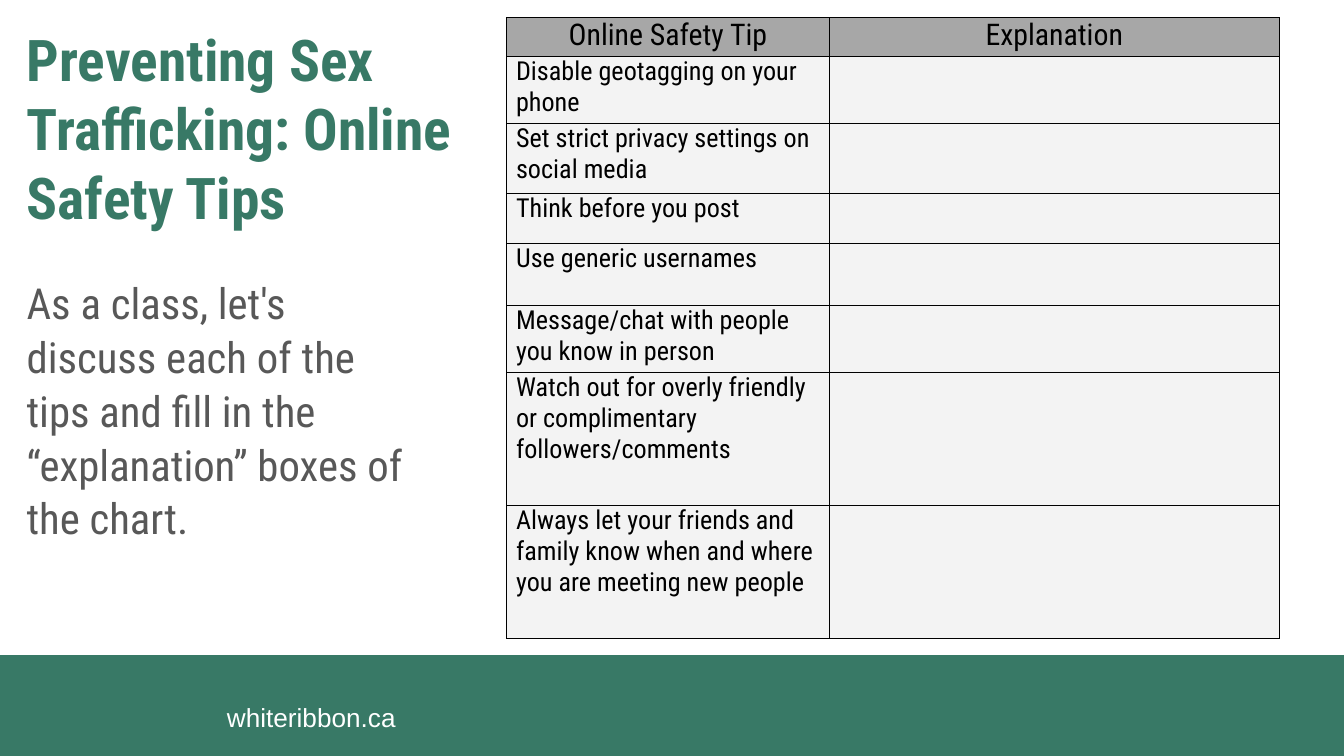
from dataclasses import dataclass
from typing import Optional

from lxml.etree import SubElement
from pptx import Presentation
from pptx.dml.color import RGBColor
from pptx.enum.shapes import MSO_SHAPE as Shape
from pptx.enum.text import MSO_ANCHOR as Anchor, PP_ALIGN as Align
from pptx.oxml.ns import qn
from pptx.util import Inches, Pt

SLIDE_WIDTH = Inches(10)
SLIDE_HEIGHT = SLIDE_WIDTH * 9 // 16
COLOURS = {
    "green": "387966",
    "grey": "585858",
    "white": "FFFFFF",
    "black": "000000",
    "header": "A7A7A7",
    "cell": "F3F3F3",
}
CONDENSED = "Roboto Condensed"


@dataclass(frozen=True)
class TextStyle:
    size: float
    colour: str
    font: str = CONDENSED
    bold: bool = False


@dataclass(frozen=True)
class TextBlock:
    left: float
    top: float
    width: float
    height: float
    words: str
    style: TextStyle
    line_spacing: Optional[float] = None


@dataclass(frozen=True)
class TipRow:
    height: float
    tip: str
    explanation: str = ""


HEADER_STYLE = TextStyle(16, "black")
TIP_STYLE = TextStyle(14, "black")

TEXT_BLOCKS = [
    TextBlock(1.59, 5.12, 1.54, 0.42, "whiteribbon.ca", TextStyle(14, "white", "Arial")),
    TextBlock(0.1, 0.08, 3.39, 0.63, "Preventing Sex Trafficking: Online Safety Tips",
              TextStyle(30.8, "green", bold=True)),
    TextBlock(0.1, 1.94, 3.03, 2,
              "As a class, let's discuss each of the tips and fill in the "
              "“explanation” boxes of the chart.",
              TextStyle(22.9, "grey"), 1.05),
]

COLUMN_WIDTHS = [2.4, 3.35]
TIP_ROWS = [
    TipRow(0.29, "Online Safety Tip", "Explanation"),
    TipRow(0.5, "Disable geotagging on your phone"),
    TipRow(0.52, "Set strict privacy settings on social media"),
    TipRow(0.37, "Think before you post"),
    TipRow(0.46, "Use generic usernames"),
    TipRow(0.5, "Message/chat with people you know in person"),
    TipRow(0.99, "Watch out for overly friendly or complimentary followers/comments"),
    TipRow(0.99, "Always let your friends and family know when and where "
                 "you are meeting new people"),
]


def rgb(name: str) -> RGBColor:
    return RGBColor.from_string(COLOURS[name])


def add_run(paragraph, words: str, style: TextStyle) -> None:
    run = paragraph.add_run()
    run.text = words
    run.font.size = Pt(style.size)
    run.font.name = style.font
    run.font.bold = style.bold
    run.font.color.rgb = rgb(style.colour)


def set_margins(holder, side: float, end: float) -> None:
    holder.margin_left = holder.margin_right = Inches(side)
    holder.margin_top = holder.margin_bottom = Inches(end)


def add_footer_band(slide) -> None:
    top = Inches(4.88)
    band = slide.shapes.add_shape(
        Shape.RECTANGLE, Inches(0), top, SLIDE_WIDTH, SLIDE_HEIGHT - top)
    band.shadow.inherit = False
    band.fill.solid()
    band.fill.fore_color.rgb = rgb("green")
    band.line.color.rgb = rgb("green")
    band.line.width = Pt(0.75)


def add_text_block(slide, block: TextBlock) -> None:
    frame = slide.shapes.add_textbox(
        Inches(block.left), Inches(block.top),
        Inches(block.width), Inches(block.height)).text_frame
    frame.word_wrap = True
    frame.vertical_anchor = Anchor.TOP
    set_margins(frame, 0.1, 0.1)
    paragraph = frame.paragraphs[0]
    if block.line_spacing:
        paragraph.line_spacing = block.line_spacing
    add_run(paragraph, block.words, block.style)


def add_borders(cell, width: float = 0.5) -> None:
    """Line all four sides; must precede the fill, which comes later in tcPr."""
    properties = cell._tc.get_or_add_tcPr()
    for side in ("a:lnL", "a:lnR", "a:lnT", "a:lnB"):
        line = SubElement(properties, qn(side), w=str(Pt(width)))
        fill = SubElement(line, qn("a:solidFill"))
        SubElement(fill, qn("a:srgbClr"), val=COLOURS["black"])


def fill_cell(cell, words: str, is_header: bool) -> None:
    add_borders(cell)
    cell.fill.solid()
    cell.fill.fore_color.rgb = rgb("header" if is_header else "cell")
    set_margins(cell, 0.07, 0)
    paragraph = cell.text_frame.paragraphs[0]
    if is_header:
        paragraph.alignment = Align.CENTER
    if words:
        add_run(paragraph, words, HEADER_STYLE if is_header else TIP_STYLE)


def add_tips_table(slide) -> None:
    table = slide.shapes.add_table(
        len(TIP_ROWS), len(COLUMN_WIDTHS), Inches(3.77), Inches(0.13),
        Inches(sum(COLUMN_WIDTHS)), Inches(sum(row.height for row in TIP_ROWS))).table
    table.horz_banding = False
    for column, width in zip(table.columns, COLUMN_WIDTHS):
        column.width = Inches(width)
    for index, row in enumerate(TIP_ROWS):
        table.rows[index].height = Inches(row.height)
        for column_index, words in enumerate((row.tip, row.explanation)):
            fill_cell(table.cell(index, column_index), words, index == 0)


def main() -> None:
    deck = Presentation()
    deck.slide_width, deck.slide_height = SLIDE_WIDTH, SLIDE_HEIGHT
    slide = deck.slides.add_slide(deck.slide_layouts[6])
    add_footer_band(slide)
    for block in TEXT_BLOCKS:
        add_text_block(slide, block)
    add_tips_table(slide)
    deck.save("out.pptx")


if __name__ == "__main__":
    main()
